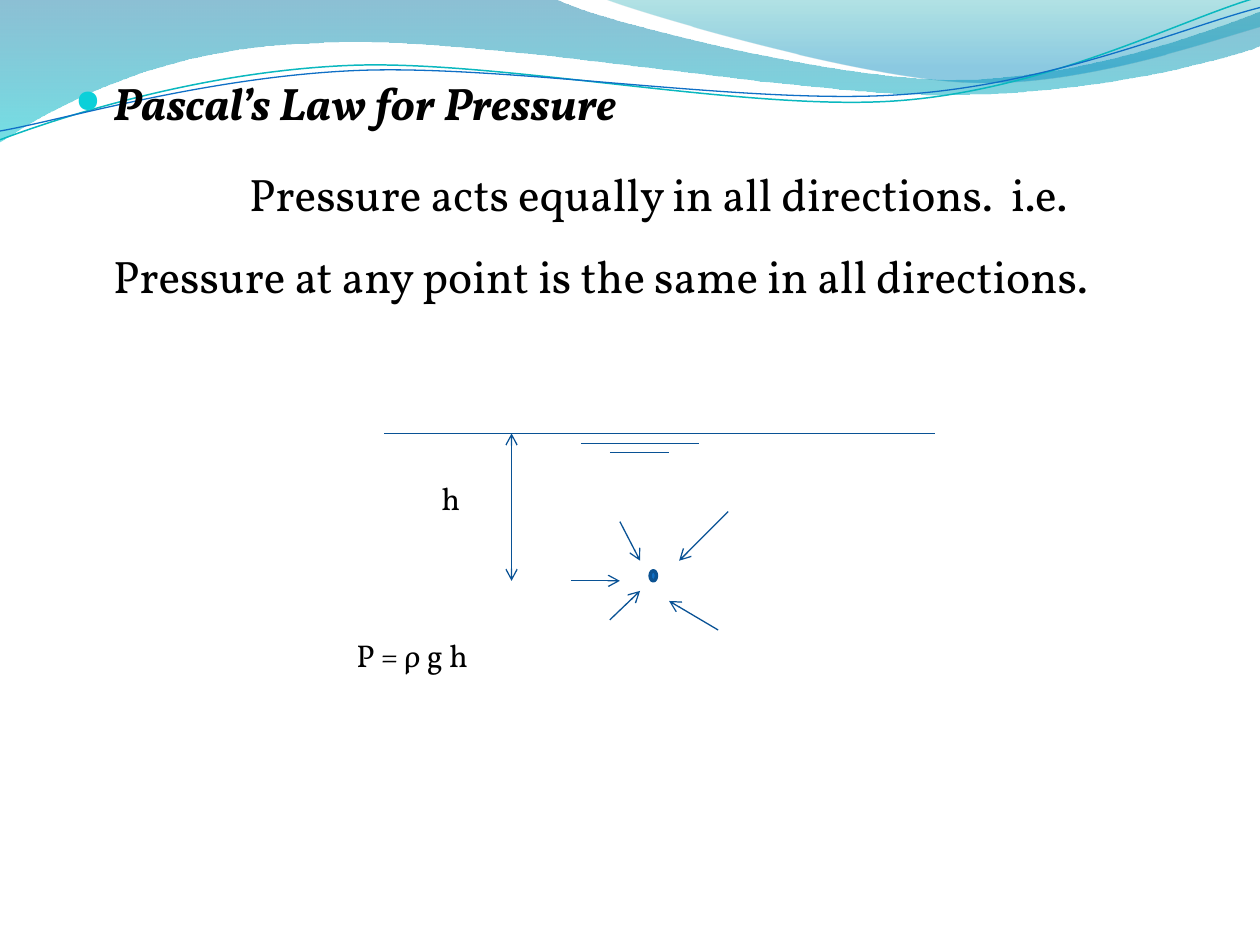
from lxml import etree
from pptx import Presentation
from pptx.dml.color import RGBColor
from pptx.enum.shapes import MSO_CONNECTOR, MSO_SHAPE
from pptx.enum.text import PP_ALIGN
from pptx.oxml.ns import qn
from pptx.util import Inches, Pt

STRAIGHT = MSO_CONNECTOR.STRAIGHT
OVAL = MSO_SHAPE.OVAL
LEFT, RIGHT = PP_ALIGN.LEFT, PP_ALIGN.RIGHT
FONT = "Vollkorn"
BLACK = RGBColor(0x00, 0x00, 0x00)
NAVY = RGBColor(0x09, 0x52, 0x95)
EDGE = RGBColor(0x0B, 0x52, 0x92)
BLUE = RGBColor(0x0F, 0x6F, 0xC6)
TEAL = RGBColor(0x0A, 0xB8, 0xBF)
CYAN = RGBColor(0x0B, 0xD0, 0xD9)

# Each wave is a start point, then curves (six numbers) or lines (two).
# Band stops are position, colour, opacity in percent.
BANDS = [
    ([(0, 0), (4.4, -0.01), (4.76, 0.17, 6.64, 0.63, 7.58, 0.63),
      (8.53, 0.63, 9.58, 0.26, 10, 0.09), (10.01, 0.36),
      (9.83, 0.44, 8.7, 0.76, 7.46, 0.75),
      (6.22, 0.75, 3.82, 0.28, 2.57, 0.34),
      (1.29, 0.36, 0.46, 0.83, -0.01, 1.13)],
     [(0, RGBColor(0x00, 0x74, 0xA1), 45), (1, RGBColor(0x00, 0xC6, 0xCF), 55)]),
    ([(4.79, -0.01), (5.09, 0.11, 6.82, 0.62, 7.69, 0.65),
      (8.56, 0.69, 9.61, 0.32, 10, 0.21), (10, 0)],
     [(0, RGBColor(0x00, 0xA1, 0xA9), 30), (0.8, RGBColor(0x00, 0x8B, 0xBF), 45)]),
]
STRANDS = [
    ([(0, 1.11), (0.48, 0.93, 1.58, 0.57, 2.77, 0.52),
      (3.95, 0.47, 5.93, 0.89, 7.13, 0.8),
      (8.33, 0.71, 9.38, 0.15, 9.98, -0.02)], TEAL, 0.85),
    ([(0, 1.04), (0.47, 0.96, 1.64, 0.61, 2.83, 0.56),
      (4.03, 0.51, 5.97, 0.84, 7.17, 0.75),
      (8.36, 0.67, 9.41, 0.21, 10, 0.06)], BLUE, 0.75),
]

# Diagram parts, relative to the left end of the water surface.
SURFACE = [(0, 0, 4.37, 0), (1.56, 0.08, 2.5, 0.08), (1.79, 0.15, 2.26, 0.15)]
ARROWS = [(1.48, 1.17, 1.87, 1.17), (2.73, 0.62, 2.34, 1.01),
          (2.65, 1.56, 2.26, 1.33), (1.79, 1.48, 2.03, 1.25),
          (1.87, 0.7, 2.03, 1.01)]
DEPTH = (1.01, 0, 1.01, 1.17)
LABELS = [("h", (0.15, 0.31, 0.55, 0.4), RIGHT),
          ("P = ρ g h", (-0.32, 1.56, 1.64, 0.4), LEFT)]


def add_wave(slide, segs, close):
    """Build the outline through the end points, then bend its curved parts."""
    ends = [tuple(map(Inches, seg[-2:])) for seg in segs]
    left, top = (min(axis) for axis in zip(*ends))
    pen = slide.shapes.build_freeform(*ends[0])
    pen.add_line_segments(ends[1:], close=close)
    wave = pen.convert_to_shape()
    wave.shadow.inherit = False
    sides = list(wave.element.spPr.iter(qn("a:lnTo")))
    for side, seg in zip(sides, segs[1:]):
        if len(seg) == 6:
            side.tag = qn("a:cubicBezTo")
            for i in (2, 0):
                x, y = map(Inches, seg[i:i + 2])
                knob = etree.Element(qn("a:pt"), x=str(x - left), y=str(y - top))
                side.insert(0, knob)
    return wave


def add_waves(slide):
    for segs, stops in BANDS:
        band = add_wave(slide, segs, True)
        band.line.fill.background()
        band.fill.gradient()
        band.fill.gradient_angle = 270
        for stop, (pos, color, _) in zip(band.fill.gradient_stops, stops):
            stop.position = pos
            stop.color.rgb = color
        tones = band.element.spPr.iter(qn("a:srgbClr"))
        for tone, (_, _, alpha) in zip(tones, stops):
            etree.SubElement(tone, qn("a:alpha"), val=str(alpha * 1000))
    for segs, color, width in STRANDS:
        strand = add_wave(slide, segs, False)
        strand.fill.background()
        strand.line.color.rgb = color
        strand.line.width = Pt(width)


def add_box(slide, box):
    frame = slide.shapes.add_textbox(*map(Inches, box)).text_frame
    frame.word_wrap = True
    return frame


def write(para, text, **form):
    para.text = text
    for run in para.runs:
        for key, val in {"name": FONT, **form}.items():
            setattr(run.font, key, val)
        run.font.color.rgb = BLACK


def set_indent(para, margin, first):
    props = para._p.get_or_add_pPr()
    props.set("marL", str(Inches(margin)))
    props.set("indent", str(Inches(first)))
    return props


def add_bullet(props):
    tint = etree.SubElement(props, qn("a:buClr"))
    etree.SubElement(tint, qn("a:srgbClr"), val=str(CYAN))
    etree.SubElement(props, qn("a:buSzPct"), val="70000")
    etree.SubElement(props, qn("a:buChar"), char="●")


def add_body(slide, box):
    frame = add_box(slide, box)
    head, law = frame.paragraphs[0], frame.add_paragraph()
    write(head, "Pascal’s Law for Pressure", size=Pt(26), bold=True, italic=True)
    write(law, "Pressure acts equally in all directions.  i.e. "
               "Pressure at any point is the same in all directions.", size=Pt(26))
    for para in (head, law):
        para.space_before = Pt(5.2)
    law.line_spacing = 1.5
    add_bullet(set_indent(head, 0.3, -0.3))
    set_indent(law, 0.3, 1.08)


def add_line(slide, left, top, ends, *tips):
    """Draw a line; tips names the ends that get an arrowhead."""
    x1, y1, x2, y2 = ends
    line = slide.shapes.add_connector(
        STRAIGHT, Inches(left + x1), Inches(top + y1),
        Inches(left + x2), Inches(top + y2))
    line.line.color.rgb = NAVY
    line.line.width = Pt(0.75)
    for tip in tips:
        etree.SubElement(line.line._get_or_add_ln(), qn(tip), type="arrow")
    etree.SubElement(line.element.spPr, qn("a:effectLst"))


def add_diagram(slide, left, top):
    for ends in SURFACE:
        add_line(slide, left, top, ends)
    dot = slide.shapes.add_shape(OVAL, Inches(left + 2.11), Inches(top + 1.09),
                                 Inches(0.05), Inches(0.08))
    dot.shadow.inherit = False
    dot.fill.solid()
    dot.fill.fore_color.rgb = BLUE
    dot.line.color.rgb = EDGE
    dot.line.width = Pt(2)
    for ends in ARROWS:
        add_line(slide, left, top, ends, "a:tailEnd")
    add_line(slide, left, top, DEPTH, "a:headEnd", "a:tailEnd")
    for text, (x, y, wide, high), align in LABELS:
        para = add_box(slide, (left + x, top + y, wide, high)).paragraphs[0]
        para.alignment = align
        write(para, text, size=Pt(18))


def main():
    deck = Presentation()
    deck.slide_width, deck.slide_height = Inches(10), Inches(7.5)
    slide = deck.slides.add_slide(deck.slide_layouts[6])
    add_waves(slide)
    add_body(slide, (0.5, 0.55, 9, 6.37))
    add_diagram(slide, 3.05, 3.44)
    deck.save("out.pptx")


if __name__ == "__main__":
    main()
